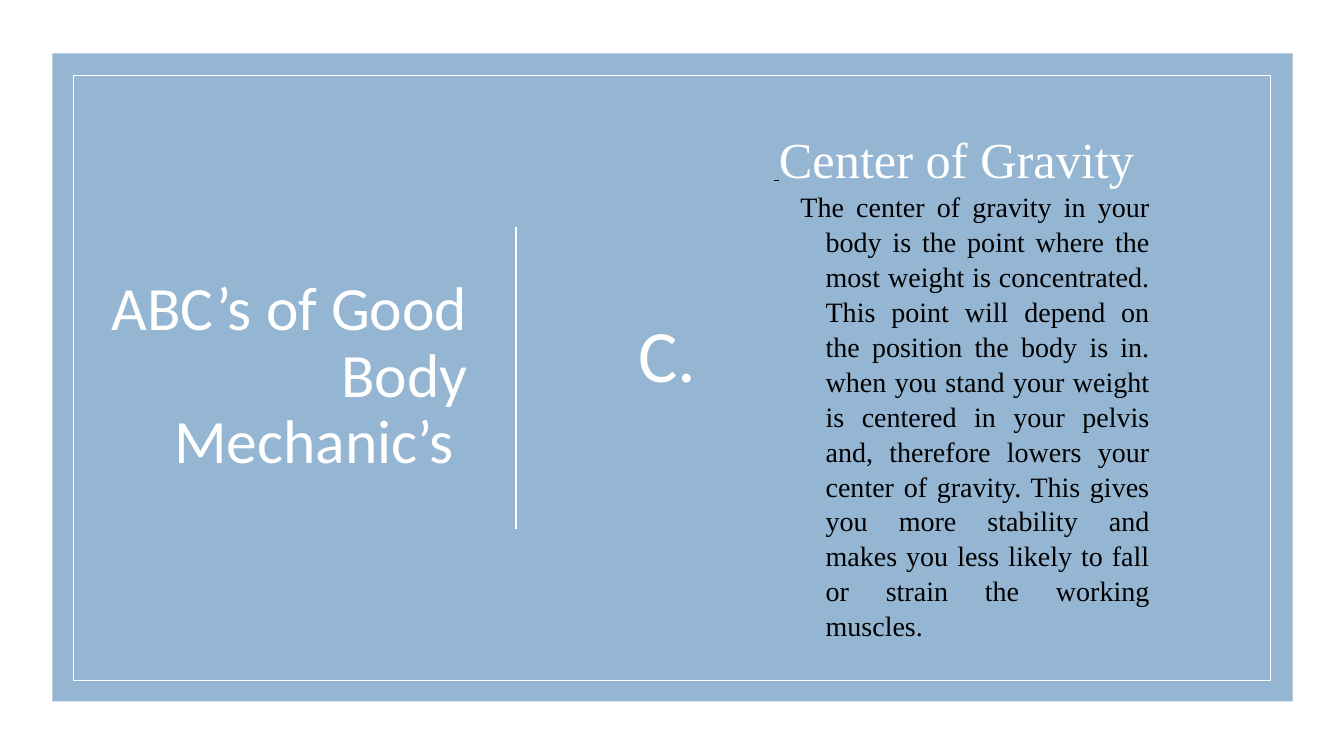
from dataclasses import dataclass
from typing import Optional

from lxml.etree import SubElement
from pptx import Presentation
from pptx.dml.color import RGBColor
from pptx.enum.shapes import MSO_CONNECTOR as Connector, MSO_SHAPE as Preset
from pptx.enum.text import MSO_ANCHOR as Anchor, MSO_AUTO_SIZE as AutoSize, PP_ALIGN as Align
from pptx.oxml.ns import qn
from pptx.util import Pt

EMU_PER_PX = 9144  # 100 px to the inch
WHITE = RGBColor(0xFF, 0xFF, 0xFF)
BLACK = RGBColor(0x00, 0x00, 0x00)
BLUE = RGBColor(0x94, 0xB6, 0xD2)
SANS, SERIF = "Calibri", "Times New Roman"


@dataclass(frozen=True)
class Box:
    left: int
    top: int
    width: int
    height: int


@dataclass(frozen=True)
class Panel:
    box: Box
    fill: Optional[RGBColor] = None
    line: Optional[RGBColor] = None


@dataclass(frozen=True)
class TextRun:
    text: str
    size: float
    font: str
    color: RGBColor
    underline: bool = False


PANELS = (
    Panel(Box(0, 0, 1333, 750), fill=WHITE),
    Panel(Box(52, 53, 1230, 643), fill=BLUE),
    Panel(Box(73, 75, 1187, 600), line=WHITE),
)
TITLE_BOX = Box(95, 109, 379, 531)
LETTER_BOX = Box(557, 249, 148, 203)
GRAVITY_BOX = Box(734, 124, 425, 508)
GRAVITY_TEXT = (
    "The center of gravity in your body is the point where the most weight is "
    "concentrated. This point will depend on the position the body is in. when you "
    "stand your weight is centered in your pelvis and, therefore lowers your center "
    "of gravity. This gives you more stability and makes you less likely to fall or "
    "strain the working muscles."
)


def px(length: int) -> int:
    return length * EMU_PER_PX


def place(shape, box: Box) -> None:
    shape.left, shape.top = px(box.left), px(box.top)
    shape.width, shape.height = px(box.width), px(box.height)


def add_panel(slide, panel: Panel) -> None:
    box = panel.box
    shape = slide.shapes.add_shape(
        Preset.RECTANGLE, px(box.left), px(box.top), px(box.width), px(box.height))
    shape.shadow.inherit = False
    if panel.fill is None:
        shape.fill.background()
    else:
        shape.fill.solid()
        shape.fill.fore_color.rgb = panel.fill
    if panel.line is None:
        shape.line.fill.background()
    else:
        shape.line.color.rgb = panel.line
        shape.line.width = Pt(0.5)


def add_divider(slide, x: int, top: int, bottom: int) -> None:
    line = slide.shapes.add_connector(Connector.STRAIGHT, px(x), px(top), px(x), px(bottom))
    line.line.color.rgb = WHITE
    line.line.width = Pt(1.25)
    SubElement(line.element.spPr, qn("a:effectLst"))


def prepare_text(shape):
    """Wrap and centre the text, and bring the shape to the front."""
    frame = shape.text_frame
    frame.word_wrap = True
    frame.auto_size = AutoSize.NONE
    frame.vertical_anchor = Anchor.MIDDLE
    shape.element.getparent().append(shape.element)
    return frame


def add_run(paragraph, part: TextRun) -> None:
    run = paragraph.add_run()
    run.text = part.text
    run.font.size = Pt(part.size)
    run.font.name = part.font
    run.font.color.rgb = part.color
    run.font.underline = part.underline


def indent(paragraph, left: int, first: int, right: int = 0) -> None:
    properties = paragraph._p.get_or_add_pPr()
    for name, length in (("marL", left), ("indent", first), ("marR", right)):
        properties.set(name, str(px(length)))


def main() -> None:
    presentation = Presentation()
    presentation.slide_width, presentation.slide_height = px(1333), px(750)
    slide = presentation.slides.add_slide(presentation.slide_layouts[1])

    # Background, blue panel and inner frame
    for panel in PANELS:
        add_panel(slide, panel)
    add_divider(slide, 512, 225, 525)

    # Title
    title = slide.shapes.title
    place(title, TITLE_BOX)
    paragraph = prepare_text(title).paragraphs[0]
    paragraph.alignment = Align.RIGHT
    paragraph.line_spacing = 0.9
    add_run(paragraph, TextRun("ABC’s of Good Body Mechanic’s ", 44, SANS, WHITE))

    # Letter
    letter = slide.placeholders[1]
    place(letter, LETTER_BOX)
    paragraph = prepare_text(letter).paragraphs[0]
    paragraph.space_before = Pt(9)
    indent(paragraph, left=66, first=0)
    SubElement(paragraph._p.get_or_add_pPr(), qn("a:buNone"))
    add_run(paragraph, TextRun("C.", 52.8, SANS, WHITE))

    # Explanation
    gravity = slide.shapes.add_textbox(0, 0, 0, 0)
    place(gravity, GRAVITY_BOX)
    frame = prepare_text(gravity)
    frame.margin_top = px(13)
    heading = frame.paragraphs[0]
    heading.alignment = Align.CENTER
    add_run(heading, TextRun(" ", 12, "Arial", BLACK, underline=True))
    add_run(heading, TextRun("Center of Gravity", 36, SERIF, WHITE))
    body = frame.add_paragraph()
    body.alignment = Align.JUSTIFY
    body.line_spacing = 1.04
    indent(body, left=75, first=-25, right=9)
    add_run(body, TextRun(GRAVITY_TEXT, 20, SERIF, BLACK))

    presentation.save("out.pptx")


if __name__ == "__main__":
    main()
